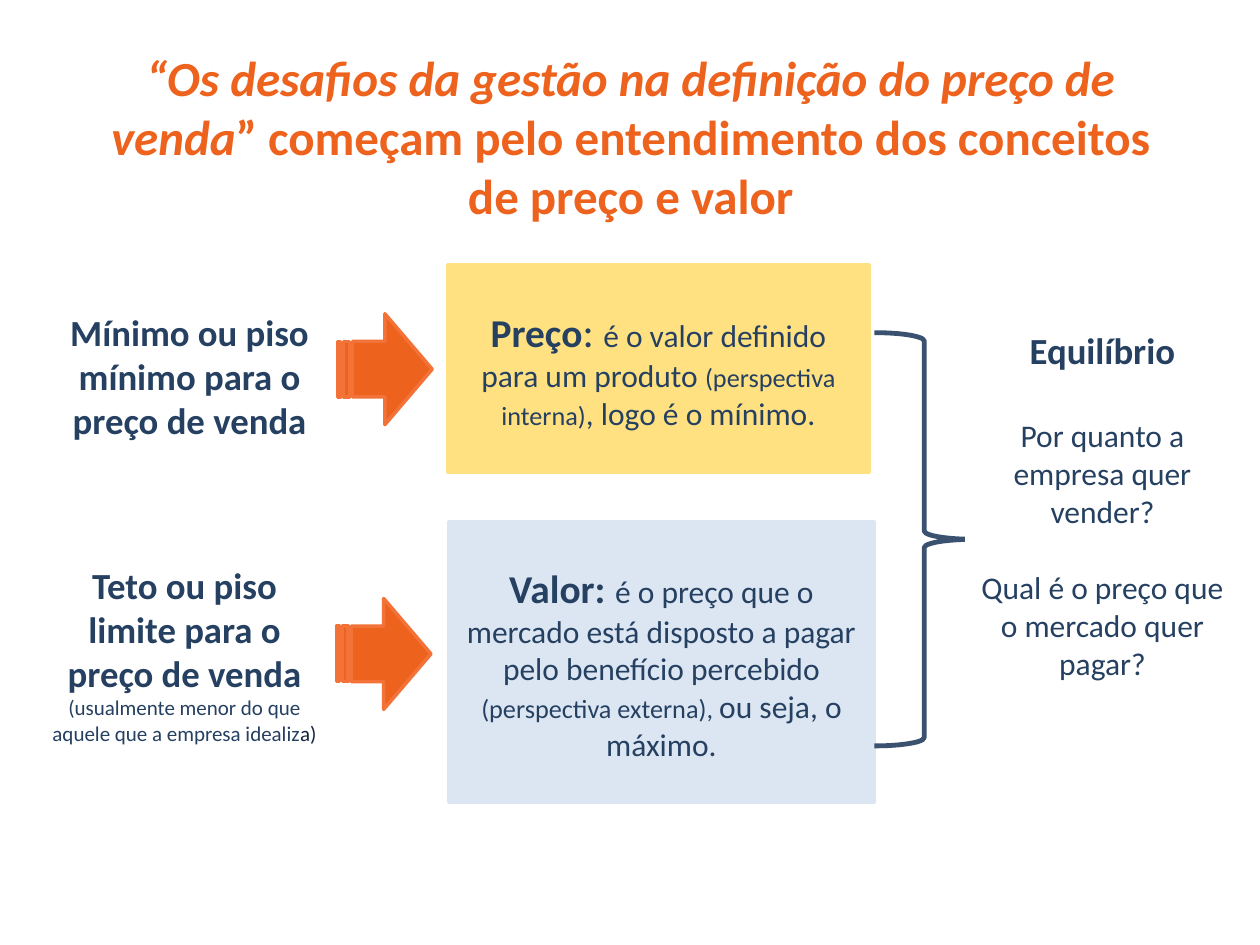
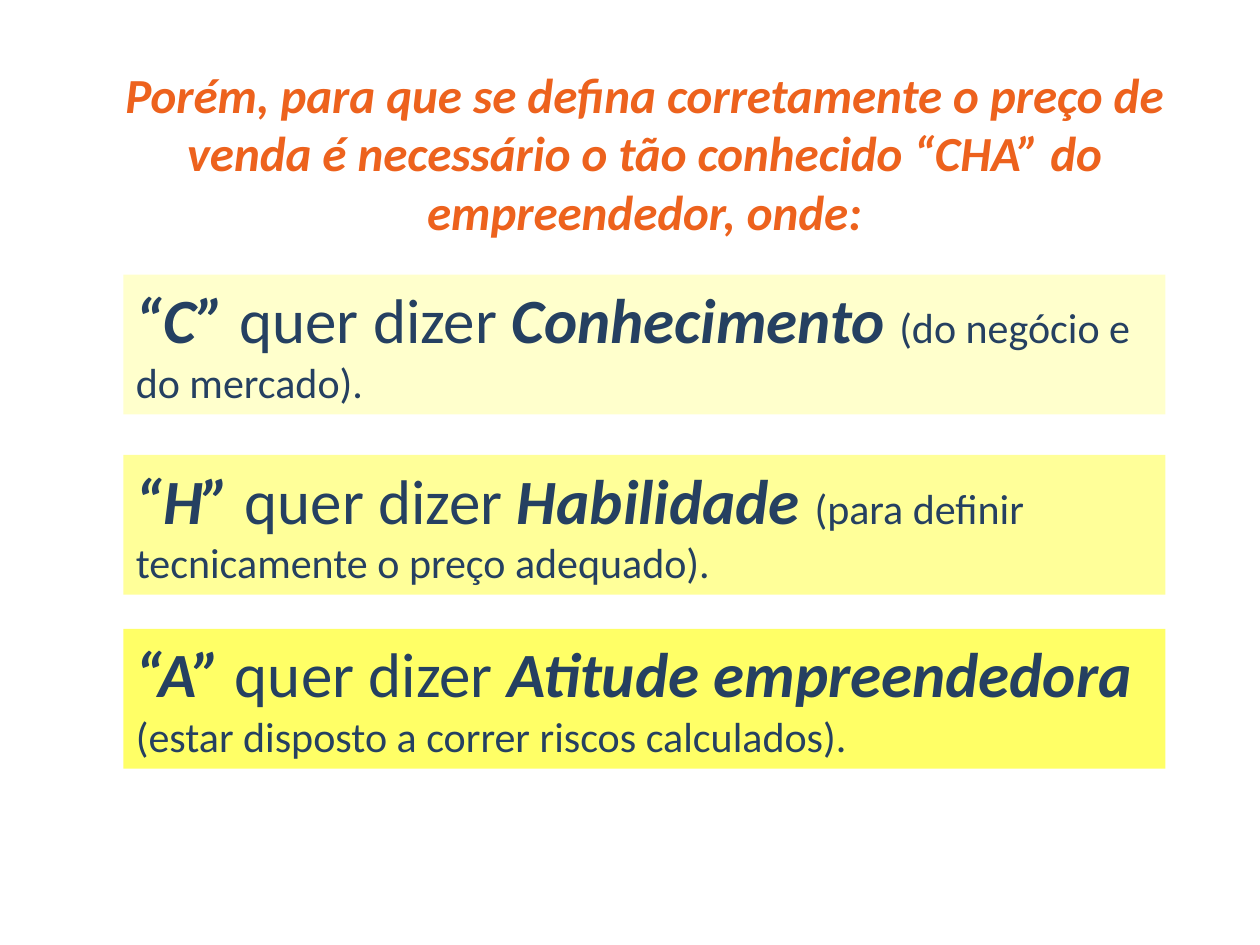
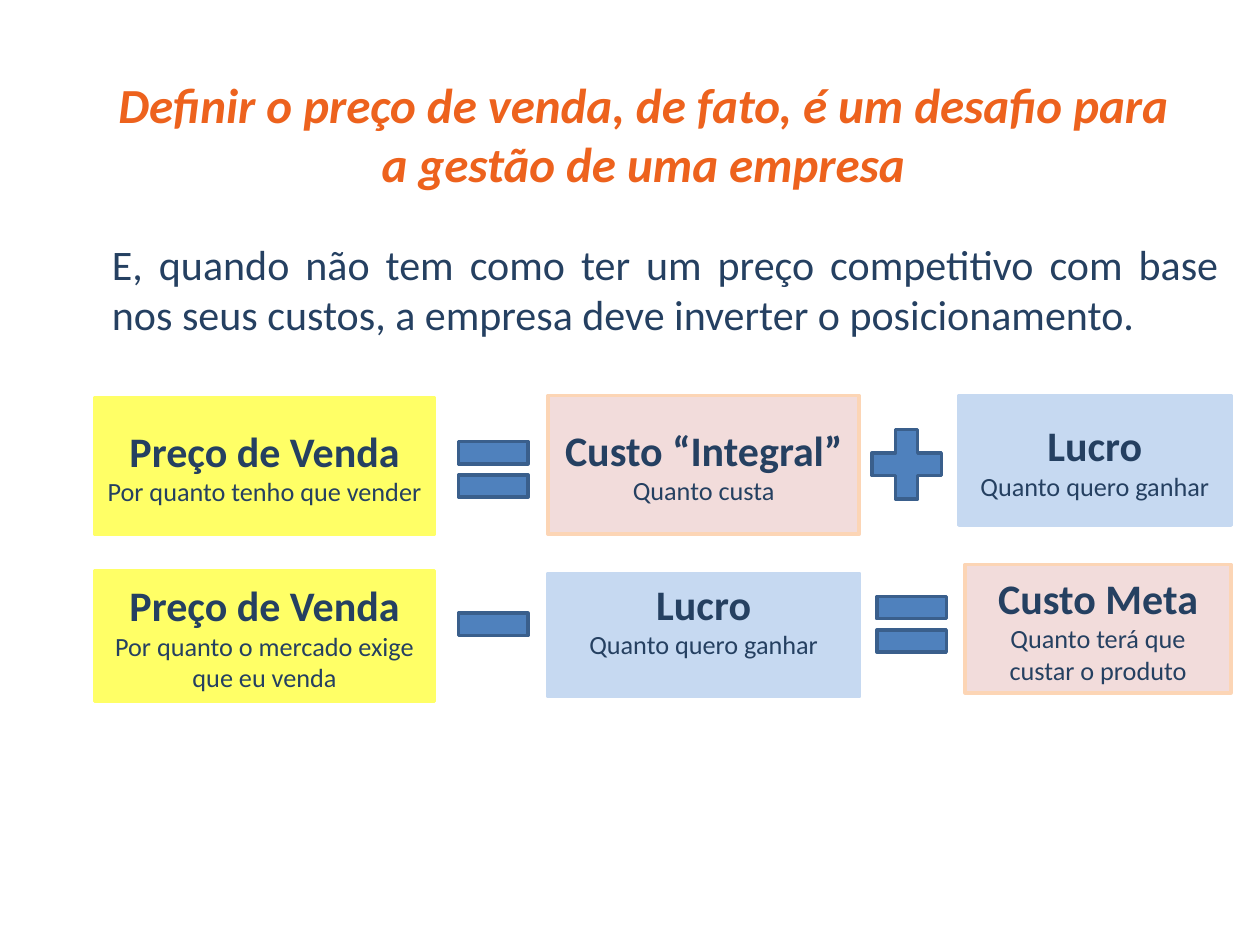
from dataclasses import dataclass
from typing import NamedTuple

from lxml import etree
from pptx import Presentation
from pptx.dml.color import RGBColor
from pptx.enum.shapes import MSO_SHAPE
from pptx.enum.text import MSO_ANCHOR, MSO_AUTO_SIZE, PP_ALIGN
from pptx.oxml.ns import qn
from pptx.util import Inches, Pt

RECTANGLE = MSO_SHAPE.RECTANGLE
STRIPED_ARROW = MSO_SHAPE.STRIPED_RIGHT_ARROW
RIGHT_BRACE = MSO_SHAPE.RIGHT_BRACE
PLUS, MINUS, EQUAL = MSO_SHAPE.MATH_PLUS, MSO_SHAPE.MATH_MINUS, MSO_SHAPE.MATH_EQUAL
LEFT, CENTER, JUSTIFY = PP_ALIGN.LEFT, PP_ALIGN.CENTER, PP_ALIGN.JUSTIFY
TOP, MIDDLE = MSO_ANCHOR.TOP, MSO_ANCHOR.MIDDLE

FONT = "Calibri"
NAVY = RGBColor(0x25, 0x40, 0x61)
DARK_NAVY = RGBColor(0x0F, 0x24, 0x3E)
ORANGE = RGBColor(0xED, 0x62, 0x1D)
ORANGE_EDGE = RGBColor(0xF2, 0x72, 0x38)
WHITE = RGBColor(0xFF, 0xFF, 0xFF)
GOLD = RGBColor(0xFF, 0xE1, 0x81)
PALE_BLUE = RGBColor(0xDC, 0xE6, 0xF2)
SKY = RGBColor(0xC6, 0xD9, 0xF1)
PALE_YELLOW = RGBColor(0xFF, 0xFF, 0xCC)
LIGHT_YELLOW = RGBColor(0xFF, 0xFF, 0x99)
YELLOW = RGBColor(0xFF, 0xFF, 0x66)
ROSE = RGBColor(0xF2, 0xDC, 0xDB)
PEACH = RGBColor(0xFC, 0xD5, 0xB5)
BLUE = RGBColor(0x4F, 0x81, 0xBD)
BLUE_EDGE = RGBColor(0x3A, 0x5F, 0x8C)

# The slide is a grid of 100 columns by 75 rows
SLIDE_WIDTH, SLIDE_HEIGHT = Inches(10), Inches(7.5)
COLUMN, ROW = SLIDE_WIDTH / 100, SLIDE_HEIGHT / 75
EDGE_WIDTH = 2


class Area(NamedTuple):
    column: float
    row: float
    columns: float
    rows: float

    def lengths(self) -> tuple:
        return (round(self.column * COLUMN), round(self.row * ROW),
                round(self.columns * COLUMN), round(self.rows * ROW))


@dataclass(frozen=True)
class Run:
    text: str
    size: float
    bold: bool = False
    italic: bool = False
    color: RGBColor = NAVY


@dataclass(frozen=True)
class Paragraph:
    runs: list[Run]
    space_before: float = 0


@dataclass(frozen=True)
class Card:
    area: Area
    fill: RGBColor
    paragraphs: list[Paragraph]
    edge: RGBColor | None = None
    bottom_inset: float = 0.05


@dataclass(frozen=True)
class Symbol:
    kind: MSO_SHAPE
    column: float
    row: float


def write_text(shape, paragraphs: list[Paragraph], *, align=CENTER, anchor=MIDDLE,
               fit=False, bottom_inset=0.05) -> None:
    frame = shape.text_frame
    frame.word_wrap = True
    frame.vertical_anchor = anchor
    frame.margin_bottom = Inches(bottom_inset)
    frame.auto_size = MSO_AUTO_SIZE.SHAPE_TO_FIT_TEXT if fit else MSO_AUTO_SIZE.NONE
    for index, content in enumerate(paragraphs):
        paragraph = frame.add_paragraph() if index else frame.paragraphs[0]
        paragraph.alignment = align
        if content.space_before:
            paragraph.space_before = Pt(content.space_before)
        for part in content.runs:
            run = paragraph.add_run()
            run.text = part.text
            font = run.font
            font.name, font.size = FONT, Pt(part.size)
            font.bold, font.italic = part.bold, part.italic
            font.color.rgb = part.color


def add_text(slide, area: Area, runs: list[Run], *, align=CENTER) -> None:
    box = slide.shapes.add_textbox(*area.lengths())
    write_text(box, [Paragraph(runs)], align=align, anchor=TOP, fit=True)


def title_run(text: str, italic: bool = True) -> Run:
    return Run(text, 28, bold=True, italic=italic, color=ORANGE)


def add_figure(slide, kind: MSO_SHAPE, area: Area, fill: RGBColor | None,
               edge: RGBColor | None, edge_width: float = EDGE_WIDTH):
    shape = slide.shapes.add_shape(kind, *area.lengths())
    shape.shadow.inherit = False
    if fill is None:
        shape.fill.background()
    else:
        shape.fill.solid()
        shape.fill.fore_color.rgb = fill
    if edge is None:
        shape.line.fill.background()
    else:
        shape.line.color.rgb = edge
        shape.line.width = Pt(edge_width)
    return shape


def add_card(slide, card: Card) -> None:
    shape = add_figure(slide, RECTANGLE, card.area, card.fill, card.edge or card.fill)
    write_text(shape, card.paragraphs, bottom_inset=card.bottom_inset)


def add_brace(slide, area: Area) -> None:
    brace = add_figure(slide, RIGHT_BRACE, area, None, NAVY, 2.75)
    color = brace.line._ln.find(".//" + qn("a:srgbClr"))
    etree.SubElement(color, qn("a:alpha")).set("val", "90000")


def label(heading: str, detail: str) -> list[Paragraph]:
    return [Paragraph([Run(heading, 24, bold=True)]), Paragraph([Run(detail, 15)])]


def build_concepts(slide) -> None:
    # Limits, definitions and arrows between them
    cards = [
        Card(Area(3.4, 24.9, 23.3, 9.8), WHITE, [Paragraph([
            Run("Mínimo ou piso mínimo para o preço de venda", 21, bold=True)])]),
        Card(Area(35.6, 41.4, 33.8, 22.3), PALE_BLUE, [Paragraph([
            Run("Valor:", 22.5, bold=True),
            Run(" ", 24, bold=True),
            Run("é o preço que o mercado está disposto a pagar pelo benefício percebido ", 18),
            Run("(perspectiva externa), ", 15),
            Run("ou seja, o máximo.", 18)])]),
        Card(Area(35.5, 21, 33.5, 16.5), GOLD, [Paragraph([
            Run("Preço", 22.5, bold=True),
            Run(": ", 24),
            Run("é o valor definido para um produto ", 18),
            Run("(perspectiva interna)", 15),
            Run(", logo é o mínimo.", 18)])]),
        Card(Area(3, 44.5, 23.3, 14.8), WHITE, [
            Paragraph([Run("Teto ou piso limite para o preço de venda", 21, bold=True)]),
            Paragraph([Run("(usualmente menor do que aquele que a empresa idealiz", 12),
                       Run("a)", 12, color=DARK_NAVY)])]),
    ]
    for card in cards:
        add_card(slide, card)
    for column, row in ((26.8, 24.9), (26.7, 47.5)):
        add_figure(slide, STRIPED_ARROW, Area(column, row, 7.5, 8.8), ORANGE, ORANGE_EDGE)

    # Balance between both limits
    add_brace(slide, Area(69.4, 26.4, 7.9, 32.8))
    add_card(slide, Card(Area(76.7, 25.6, 21.6, 28.9), WHITE, [
        Paragraph([Run("Equilíbrio", 21, bold=True)]),
        Paragraph([Run("Por quanto a empresa quer vender?", 18)], space_before=25.6),
        Paragraph([Run("Qual é o preço que o mercado quer pagar?", 18)], space_before=22)]))
    add_text(slide, Area(6.4, 3.3, 87.3, 15.1), [
        title_run("“Os desafios da gestão na definição do preço de venda"),
        title_run("” começam pelo entendimento dos conceitos de preço e valor", italic=False)])


def build_entrepreneur_profile(slide) -> None:
    add_text(slide, Area(7.4, 4.6, 87.5, 15.1), [
        title_run("Porém, para que se defina corretamente o preço de venda é necessário "
                  "o tão conhecido “CHA” do empreendedor, onde:")])
    # One band for each letter
    bands = [
        (21.8, PALE_YELLOW, "C", "Conhecimento", "(do negócio e do mercado)."),
        (36.1, LIGHT_YELLOW, "H", "Habilidade", "(para definir tecnicamente o preço adequado)."),
        (49.9, YELLOW, "A", "Atitude empreendedora", "(estar disposto a correr riscos calculados)."),
    ]
    for row, fill, letter, meaning, detail in bands:
        band = add_figure(slide, RECTANGLE, Area(9.8, row, 82.7, 11.1), fill, None)
        write_text(band, [Paragraph([
            Run(f"“{letter}”", 36, bold=True, italic=True),
            Run(" quer dizer ", 36),
            Run(f"{meaning} ", 36, bold=True, italic=True),
            Run(detail, 24)])], align=LEFT, anchor=TOP, fit=True)


def build_equations(slide) -> None:
    add_text(slide, Area(7.4, 5.4, 87.3, 10.4), [
        title_run("Definir o preço de venda, de fato, é um desafio para a gestão de uma empresa")])
    add_text(slide, Area(7.9, 18.4, 89.8, 9.1), [
        Run("E, quando não tem como ter um preço competitivo com base nos seus custos, "
            "a empresa deve inverter o posicionamento.", 24)], align=JUSTIFY)

    # Terms of both equations
    cards = [
        Card(Area(7.5, 31.6, 27, 10.8), YELLOW,
             label("Preço de Venda", "Por quanto tenho que vender")),
        Card(Area(43.5, 31.4, 24.7, 11), ROSE,
             label("Custo “Integral”", "Quanto custa"), PEACH),
        Card(Area(76.1, 31.4, 21.6, 10.3), SKY, label("Lucro", "Quanto quero ganhar")),
        Card(Area(7.5, 45.3, 27, 10.4), YELLOW,
             label("Preço de Venda", "Por quanto o mercado exige que eu venda")),
        Card(Area(43.5, 45.5, 24.7, 9.8), SKY,
             label("Lucro", "Quanto quero ganhar"), bottom_inset=0.3),
        Card(Area(76.6, 44.8, 21.1, 10.2), ROSE,
             label("Custo Meta", "Quanto terá que custar o produto"), PEACH),
    ]
    for card in cards:
        add_card(slide, card)

    # Operators between the terms
    symbols = [Symbol(EQUAL, 35.4, 33.5), Symbol(PLUS, 68.2, 33.1),
               Symbol(MINUS, 35.4, 45.8), Symbol(EQUAL, 68.6, 45.8)]
    for symbol in symbols:
        add_figure(slide, symbol.kind, Area(symbol.column, symbol.row, 7.5, 7.5),
                   BLUE, BLUE_EDGE)


def main() -> None:
    presentation = Presentation()
    presentation.slide_width, presentation.slide_height = SLIDE_WIDTH, SLIDE_HEIGHT
    blank = presentation.slide_layouts[6]
    for build in (build_concepts, build_entrepreneur_profile, build_equations):
        build(presentation.slides.add_slide(blank))
    presentation.save("out.pptx")


if __name__ == "__main__":
    main()
